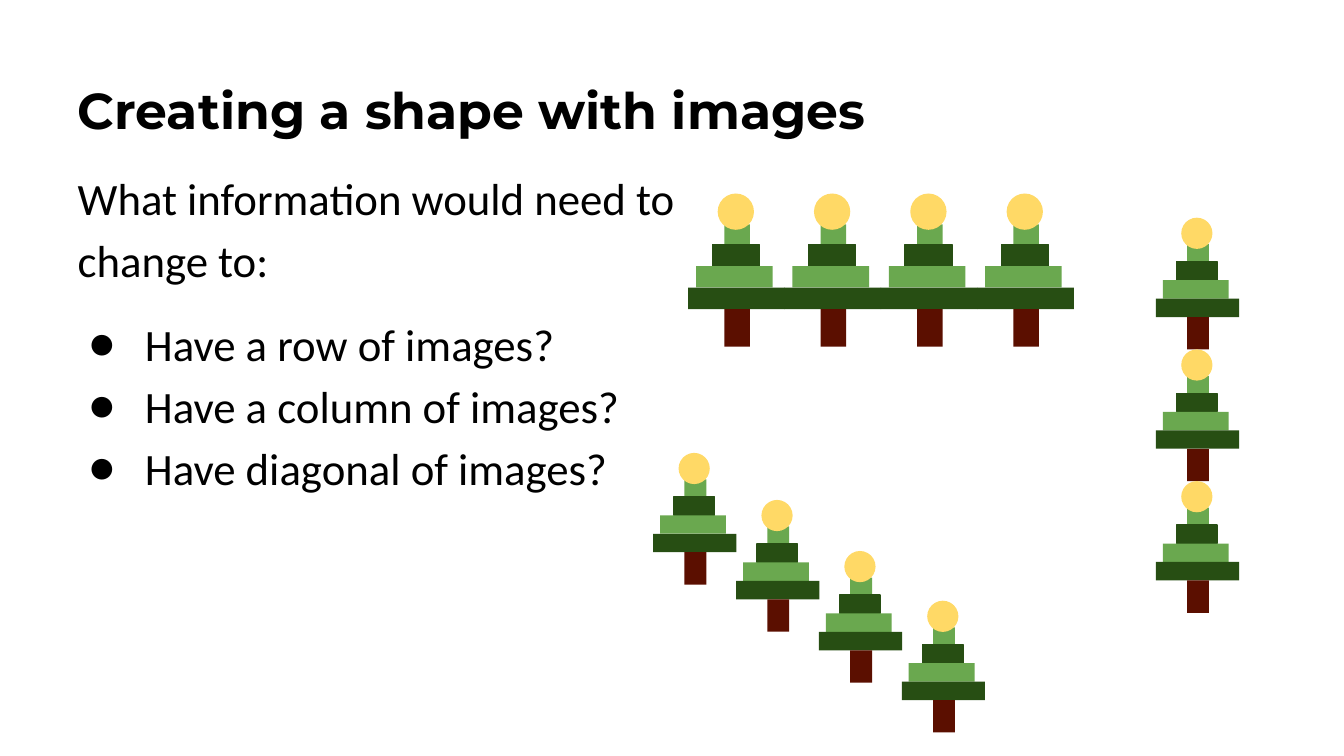
from lxml import etree
from pptx import Presentation
from pptx.dml.color import RGBColor
from pptx.enum import shapes
from pptx.oxml import ns
from pptx.util import Inches, Pt


def paint(fmt, tone):
    fmt.solid()
    fmt.fore_color.rgb = RGBColor.from_string(tone)


def write(par, words, face, size, bold=False):
    run = par.add_run()
    run.text = words
    run.font.name = face
    run.font.size = Pt(size)
    run.font.bold = bold
    paint(run.font.fill, "000000")


deck = Presentation()
deck.slide_width = Inches(10)
deck.slide_height = Inches(10 * 9 / 16)
slide = deck.slides.add_slide(deck.slide_layouts[6])

frames = []
for left, top, wide, high in [(0.48, 0.49, 9.18, 0.68), (0.48, 1.11, 4.64, 3.72)]:
    box = slide.shapes.add_textbox(Inches(left), Inches(top), Inches(wide), Inches(high))
    frame = box.text_frame
    frame.word_wrap = True
    frame.margin_left = frame.margin_right = Inches(0.1)
    frame.margin_top = frame.margin_bottom = Inches(0.1)
    frames.append(frame)
title, body = frames

write(title.paragraphs[0], "Creating a shape with images", "Montserrat", 27, True)

intro = body.paragraphs[0]
intro.line_spacing = 1.15
write(intro, "What information would need to change to:", "Calibri", 24)

tasks = ["Have a row of images?", "Have a column of images?", "Have diagonal of images?"]
for i, task in enumerate(tasks):
    par = body.add_paragraph()
    props = par._p.get_or_add_pPr()
    props.set("marL", str(Inches(0.5)))
    props.set("indent", str(Inches(-0.42)))
    tint = etree.SubElement(props, ns.qn("a:buClr"))
    etree.SubElement(tint, ns.qn("a:srgbClr"), val="000000")
    etree.SubElement(props, ns.qn("a:buFont"), typeface="Calibri")
    etree.SubElement(props, ns.qn("a:buChar"), char="●")
    par.line_spacing = 1.15
    par.space_before = Pt(0 if i else 12)
    write(par, task, "Calibri", 24)

rect = shapes.MSO_SHAPE.RECTANGLE
oval = shapes.MSO_SHAPE.OVAL
light, dark, brown, gold = "6AA84F", "274E13", "5B0F00", "FFD966"
parts = [
    (rect, 0.27, 0.23, 0.19, 0.16, light, False),
    (rect, 0.18, 0.38, 0.35, 0.16, dark, True),
    (rect, 0.06, 0.54, 0.57, 0.16, light, False),
    (rect, 0, 0.7, 0.72, 0.16, dark, False),
    (rect, 0.27, 0.86, 0.19, 0.28, brown, False),
    (oval, 0.22, 0, 0.27, 0.27, gold, False),
]

row = [(5.12 + 2.15 * i / 3, 1.44) for i in range(4)]
column = [(8.6, 1.62 + 0.98 * i) for i in range(3)]
slant = [(4.86 + 1.85 * i / 3, y) for i, y in enumerate([3.37, 3.72, 4.1, 4.47])]

for spots, scale in [(row, 1), (column, 0.86), (slant, 0.86)]:
    group = slide.shapes.add_group_shape()
    for x, y in spots:
        for kind, dx, dy, wide, high, tone, edge in parts:
            piece = group.shapes.add_shape(
                kind, Inches(x + dx * scale), Inches(y + dy * scale),
                Inches(wide * scale), Inches(high * scale))
            piece.shadow.inherit = False
            paint(piece.fill, tone)
            if edge:
                paint(piece.line.fill, tone)
                piece.line.width = Pt(0.75)
            else:
                piece.line.fill.background()

deck.save("out.pptx")
